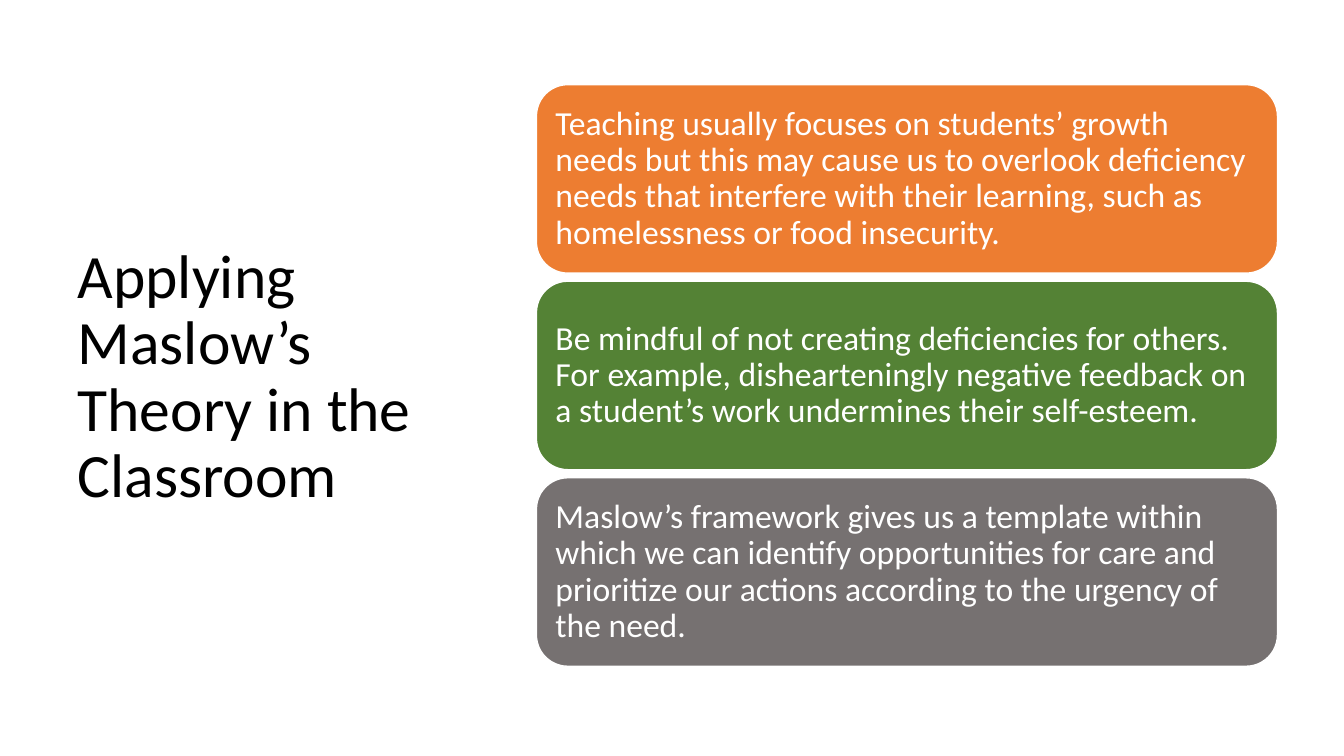
from pptx import Presentation
from pptx import util as u
from pptx.dml.color import RGBColor
from pptx.enum import shapes, text

PX = 9144  # EMU per px, 100 px to the inch
COLORS = {
    "black": "000000",
    "white": "FFFFFF",
    "orange": "ED7D31",
    "green": "548235",
    "gray": "767171",
}
CARDS = [
    ("orange", "Teaching usually focuses on students’ growth needs but this may cause us to "
               "overlook deficiency needs that interfere with their learning, such as "
               "homelessness or food insecurity."),
    ("green", "Be mindful of not creating deficiencies for others. For example, "
              "dishearteningly negative feedback on a student’s work undermines their "
              "self-esteem."),
    ("gray", "Maslow’s framework gives us a template within which we can identify "
             "opportunities for care and prioritize our actions according to the urgency "
             "of the need."),
]
CARD_LEFT, CARD_TOP, CARD_WIDTH, CARD_HEIGHT, CARD_STEP = 532, 84, 735, 187, 195


def color(name):
    return RGBColor.from_string(COLORS[name])


def write(shape, words, size, color_name):
    """Fill the shape with one left-aligned, vertically centred paragraph."""
    frame = shape.text_frame
    frame.text = words
    frame_format = {
        "word_wrap": True,
        "auto_size": text.MSO_AUTO_SIZE.NONE,
        "vertical_anchor": text.MSO_ANCHOR.MIDDLE,
        "margin_left": 10 * PX,
        "margin_top": 10 * PX,
        "margin_right": 10 * PX,
        "margin_bottom": 10 * PX,
    }
    for name, value in frame_format.items():
        setattr(frame, name, value)
    paragraph = frame.paragraphs[0]
    paragraph.alignment = text.PP_ALIGN.LEFT
    paragraph.line_spacing = 0.9
    paragraph.space_before = u.Pt(0)
    font = paragraph.runs[0].font
    for name, value in {"name": "Calibri", "size": u.Pt(size)}.items():
        setattr(font, name, value)
    font.color.rgb = color(color_name)


presentation = Presentation()
presentation.slide_width = 1333 * PX
presentation.slide_height = 750 * PX
slide = presentation.slides.add_slide(presentation.slide_layouts[5])

title = slide.shapes.title
title_box = {"left": 67, "top": 70, "width": 435, "height": 610}
for name, value in title_box.items():
    setattr(title, name, value * PX)
write(title, "Applying Maslow’s Theory in the Classroom", 44, "black")

for index, (fill_name, words) in enumerate(CARDS):
    card = slide.shapes.add_shape(
        shapes.MSO_SHAPE.ROUNDED_RECTANGLE,
        CARD_LEFT * PX, (CARD_TOP + index * CARD_STEP) * PX,
        CARD_WIDTH * PX, CARD_HEIGHT * PX)
    card.shadow.inherit = False
    card.fill.solid()
    card.fill.fore_color.rgb = color(fill_name)
    card.line.color.rgb = color("white")
    card.line.width = u.Pt(1)
    write(card, words, 24, "white")

presentation.save("out.pptx")
